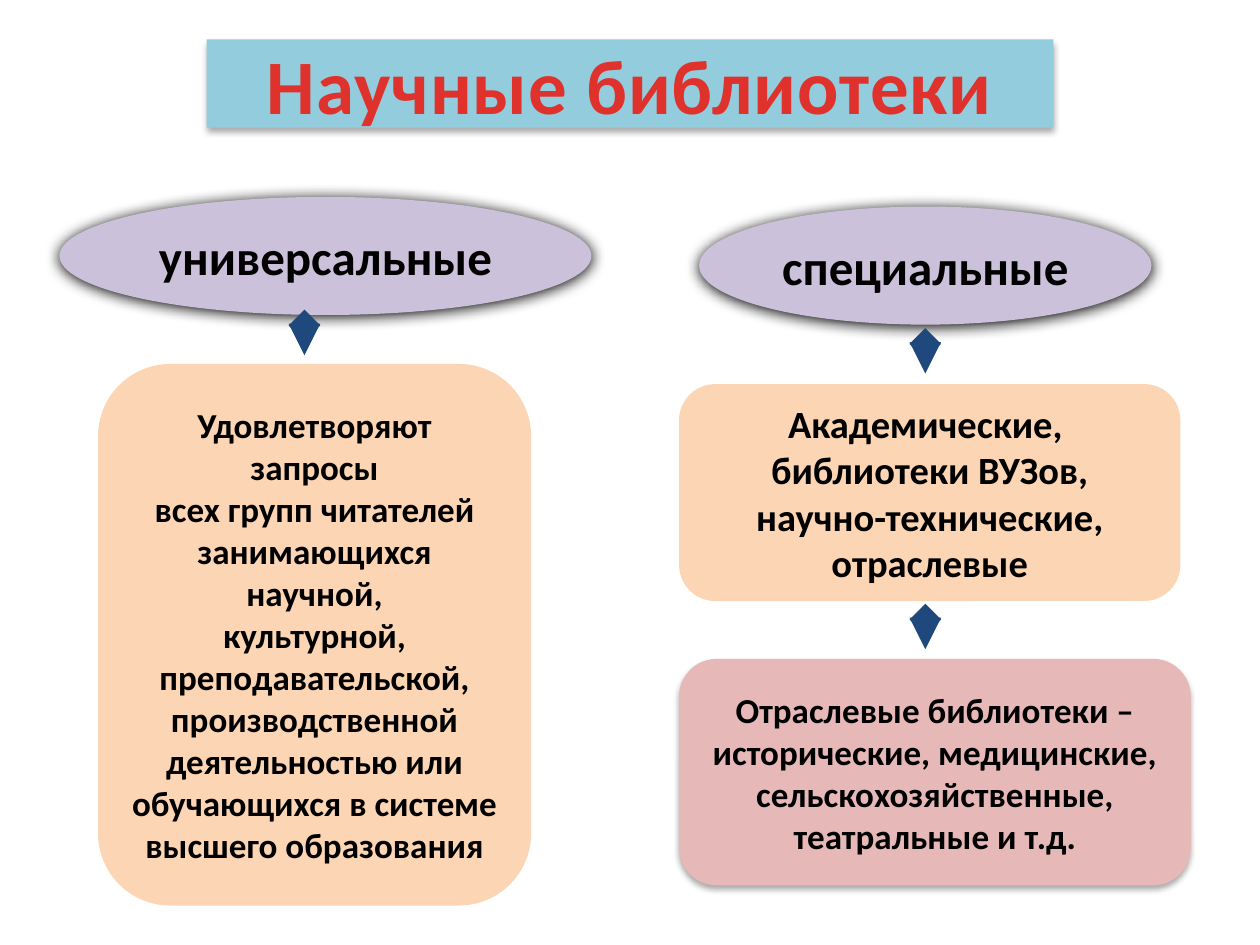
from dataclasses import dataclass

from lxml import etree
from pptx import Presentation
from pptx.dml.color import RGBColor
from pptx.enum.shapes import MSO_CONNECTOR, MSO_SHAPE
from pptx.enum.text import MSO_ANCHOR, PP_ALIGN
from pptx.oxml.ns import qn
from pptx.util import Pt

ROUND, OVAL = MSO_SHAPE.ROUNDED_RECTANGLE, MSO_SHAPE.OVAL
STRAIGHT = MSO_CONNECTOR.STRAIGHT
CENTER, MIDDLE = PP_ALIGN.CENTER, MSO_ANCHOR.MIDDLE


@dataclass(frozen=True)
class Theme:
    """Colours, type sizes and shadows of the slide."""
    font: str = "Calibri"
    text: str = "000000"
    title_fill: str = "93CDDD"
    title_from: str = "E0322D"
    title_to: str = "A2201C"
    kind: str = "CCC1DA"
    detail: str = "FCD5B5"
    example: str = "E6B9B8"
    arrow: str = "1F497D"
    title_size: int = 44
    kind_size: int = 28
    large_size: int = 22
    body_size: int = 20
    arrow_width: int = 6
    soft: tuple = (3.5, 2.2, 32)
    glow: tuple = (8.5, 1, 100)


THEME = Theme()


def rgb(color):
    """Turn a hex string into a colour."""
    return RGBColor.from_string(color)


def add_effects(s, shadow=None):
    """Give a shape an effect list, with a downward shadow if one is given."""
    effects = etree.SubElement(s._element.spPr, qn("a:effectLst"))
    if shadow:
        blur, dist, alpha = shadow
        outer = etree.SubElement(effects, qn("a:outerShdw"), blurRad=str(Pt(blur)),
                                 dist=str(Pt(dist)), dir="5400000", rotWithShape="0")
        color = etree.SubElement(outer, qn("a:srgbClr"), val="000000")
        etree.SubElement(color, qn("a:alpha"), val=str(alpha * 1000))


def add_title(slide, box, text):
    """Place the title placeholder as a rounded banner."""
    s = slide.shapes.title
    s.left, s.top, s.width, s.height = map(Pt, box)
    geom = etree.SubElement(s._element.spPr, qn("a:prstGeom"), prst="roundRect")
    etree.SubElement(geom, qn("a:avLst"))
    s.fill.solid()
    s.fill.fore_color.rgb = rgb(THEME.title_fill)
    add_effects(s, THEME.soft)
    tf = s.text_frame
    tf.vertical_anchor = MIDDLE
    p = tf.paragraphs[0]
    p.alignment = CENTER
    r = p.add_run()
    r.text = text
    r.font.name, r.font.size, r.font.bold = THEME.font, Pt(THEME.title_size), True
    r.font.fill.gradient()
    r.font.fill.gradient_angle = 270
    stops = ((0.25, THEME.title_from), (1, THEME.title_to))
    for stop, (position, color) in zip(r.font.fill.gradient_stops, stops):
        stop.position = position
        stop.color.rgb = rgb(color)
    r.font._element.set("spc", "50")


def add_panel(slide, kind, box, lines, color, size, shadow=None):
    """Add a filled shape with centred bold lines."""
    s = slide.shapes.add_shape(kind, *map(Pt, box))
    s.fill.solid()
    s.fill.fore_color.rgb = rgb(color)
    s.line.fill.background()
    add_effects(s, shadow)
    tf = s.text_frame
    tf.word_wrap = True
    tf.vertical_anchor = MIDDLE
    for i, line in enumerate(lines):
        p = tf.add_paragraph() if i else tf.paragraphs[0]
        p.text = line
        p.alignment = CENTER
        p.font.name, p.font.size, p.font.bold = THEME.font, Pt(size), True
        p.font.color.rgb = rgb(THEME.text)


def add_arrow(slide, x, y, length=17):
    """Add a short downward arrow with a diamond tail."""
    s = slide.shapes.add_connector(STRAIGHT, Pt(x), Pt(y), Pt(x), Pt(y + length))
    s.line.color.rgb = rgb(THEME.arrow)
    s.line.width = Pt(THEME.arrow_width)
    ln = s.line._ln
    etree.SubElement(ln, qn("a:headEnd"), type="diamond")
    etree.SubElement(ln, qn("a:tailEnd"), type="triangle")
    add_effects(s)


def add_universal(slide, box):
    """Place the universal libraries column in its box."""
    x, y, w, h = box
    add_panel(slide, OVAL, (x, y, w, 67.5), ["универсальные"],
              THEME.kind, THEME.kind_size, THEME.glow)
    add_panel(slide, ROUND, (x + 22, y + 95.5, w - 56.5, h - 95.5), [
        "Удовлетворяют запросы",
        "всех групп читателей",
        "занимающихся научной,",
        "культурной,",
        "преподавательской,",
        "производственной",
        "деятельностью или",
        "обучающихся в системе",
        "высшего образования",
    ], THEME.detail, THEME.body_size)
    add_arrow(slide, x + 140, y + 73.5)


def add_special(slide, box):
    """Place the special libraries column in its box."""
    x, y, w, h = box
    add_panel(slide, OVAL, (x + 11.5, y, w - 34, 67.5), ["специальные"],
              THEME.kind, THEME.kind_size, THEME.glow)
    add_panel(slide, ROUND, (x, y + 101.5, w - 6, 124), [
        "Академические, ",
        "библиотеки ВУЗов,",
        "научно-технические,",
        "отраслевые",
    ], THEME.detail, THEME.large_size)
    add_panel(slide, ROUND, (x, y + h - 129.5, w, 129.5), [
        "Отраслевые библиотеки – исторические, медицинские,",
        "сельскохозяйственные,",
        "театральные и т.д.",
    ], THEME.example, THEME.body_size, THEME.soft)
    for offset in (78.5, 236):
        add_arrow(slide, x + 140.75, y + offset)


def main():
    """Build and save the slide."""
    prs = Presentation()
    prs.slide_width, prs.slide_height = Pt(720), Pt(540)
    slide = prs.slides.add_slide(prs.slide_layouts[5])
    add_title(slide, (118, 22.5, 484, 50.5), "Научные библиотеки")
    add_universal(slide, (34, 112.5, 304, 405))
    add_special(slide, (388, 118, 292.5, 388))
    prs.save("out.pptx")


if __name__ == "__main__":
    main()
